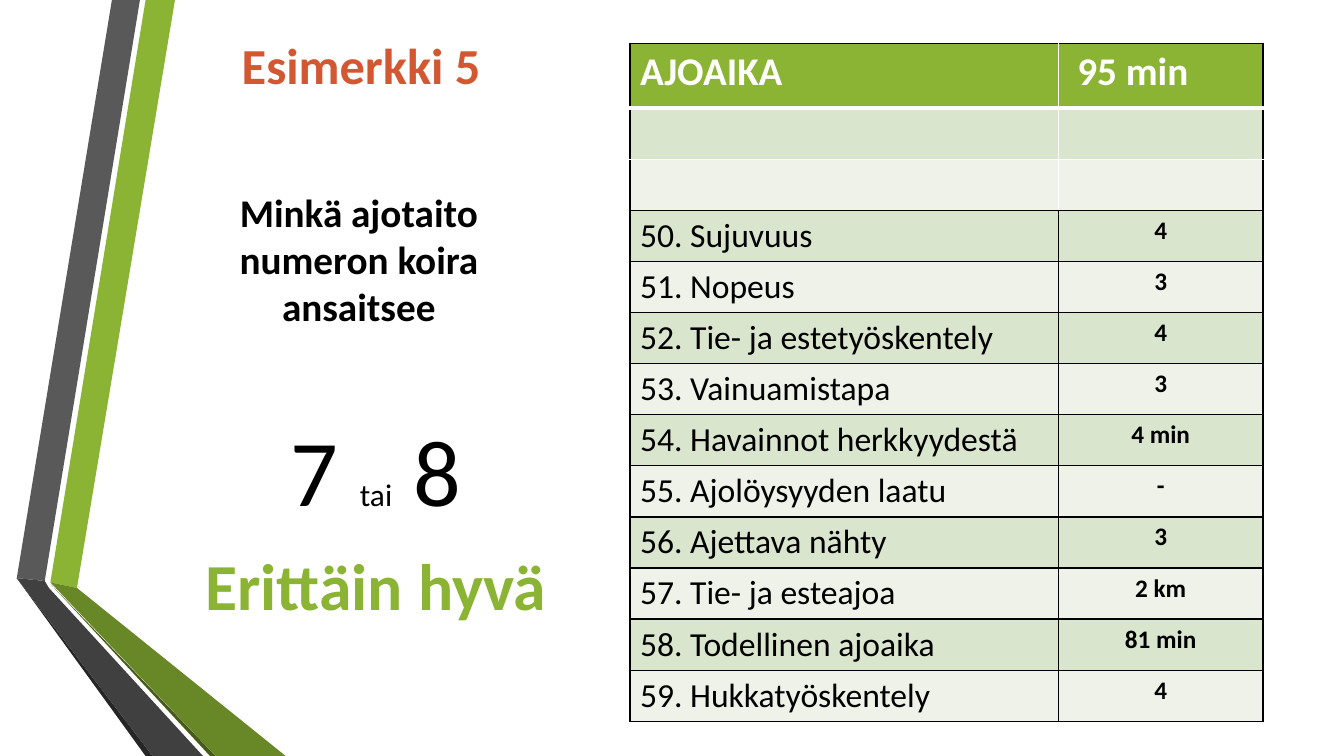
from lxml.etree import SubElement
from pptx import Presentation
from pptx.dml.color import RGBColor
from pptx.enum.text import MSO_ANCHOR, PP_ALIGN
from pptx.oxml.ns import qn
from pptx.util import Pt

BLACK = RGBColor(0x00, 0x00, 0x00)
WHITE = RGBColor(0xFF, 0xFF, 0xFF)
GREEN = RGBColor(0x8B, 0xB4, 0x34)
GREEN_SHADE = RGBColor(0x68, 0x87, 0x27)
GREEN_EDGE = RGBColor(0x46, 0x5A, 0x1A)
GREY = RGBColor(0x59, 0x59, 0x59)
GREY_SHADE = RGBColor(0x40, 0x40, 0x40)
GREY_EDGE = RGBColor(0x26, 0x26, 0x26)
ORANGE = RGBColor(0xD3, 0x57, 0x31)
BANDS = [RGBColor(0xDA, 0xE5, 0xCE), RGBColor(0xEE, 0xF2, 0xE8)]


def add_run(paragraph, text, color, **font_format):
    run = paragraph.add_run()
    run.text = text
    run.font.color.rgb = color
    for name, value in ({"name": "Calibri"} | font_format).items():
        setattr(run.font, name, value)


def add_border(cell, side, color, width):
    """Draw one cell edge; call in the order L, R, T, B and before filling."""
    line = SubElement(cell._tc.get_or_add_tcPr(), qn(f"a:ln{side}"), w=str(Pt(width)))
    fill = SubElement(line, qn("a:solidFill"))
    SubElement(fill, qn("a:srgbClr"), val=str(color))


prs = Presentation()
prs.slide_width, prs.slide_height = Pt(960), Pt(540)
slide = prs.slides.add_slide(prs.slide_layouts[6])

# Folded ribbons along the left edge
ribbons = [
    (GREEN, [(36, 416.2), (55.4, 419.8), (124.6, 0), (104.4, 0)]),
    (GREY, [(100.1, 0), (79.9, 0), (11.5, 412.6), (31.7, 415.4)]),
    (GREY_EDGE, [(11.5, 412.6), (104.4, 540), (108.7, 540)]),
    (GREEN_EDGE, [(36, 416.9), (149.8, 540), (154.1, 540)]),
    (GREEN_SHADE, [(36, 416.2), (154.1, 540), (203.8, 540), (55.4, 419.8)]),
    (GREY_SHADE, [(145.4, 540), (34.6, 419.8), (31.7, 415.4), (11.5, 412.6), (108.7, 540)]),
]
for color, points in ribbons:
    builder = slide.shapes.build_freeform(*points[0], scale=Pt(1))
    builder.add_line_segments(points[1:], close=True)
    ribbon = builder.convert_to_shape()
    ribbon.fill.solid()
    ribbon.fill.fore_color.rgb = color
    ribbon.line.fill.background()
    ribbon.shadow.inherit = False

# Heading, question and answer
BIG = {"size": Pt(67.2)}
texts = [
    ((165.6, 20.9, 242.6, 51.1), MSO_ANCHOR.TOP, PP_ALIGN.LEFT,
     [[("Esimerkki 5", ORANGE, {"size": Pt(36), "bold": True})]]),
    ((116.6, 131, 279.4, 108), MSO_ANCHOR.BOTTOM, PP_ALIGN.CENTER,
     [[("Minkä ajotaito numeron koira ansaitsee", BLACK, {"size": Pt(28), "bold": True})]]),
    ((128.9, 298.1, 279.4, 144), MSO_ANCHOR.MIDDLE, PP_ALIGN.CENTER,
     [[("7 ", BLACK, BIG), ("tai", BLACK, {"size": Pt(22.4)}), (" 8", BLACK, BIG)],
      [("Erittäin hyvä", GREEN, {"size": Pt(46.9), "bold": True})]]),
]
for place, anchor, alignment, lines in texts:
    frame = slide.shapes.add_textbox(*map(Pt, place)).text_frame
    frame.word_wrap = True
    frame.vertical_anchor = anchor
    for index, runs in enumerate(lines):
        paragraph = frame.add_paragraph() if index else frame.paragraphs[0]
        paragraph.alignment = alignment
        paragraph.space_before = Pt(13.6 if index else 0)
        for text, color, font_format in runs:
            add_run(paragraph, text, color, **font_format)

# Score table
scores = [
    ("AJOAIKA", " 95 min"),
    ("", ""),
    ("", ""),
    ("50. Sujuvuus", "4"),
    ("51. Nopeus", "3"),
    ("52. Tie- ja estetyöskentely", "4"),
    ("53. Vainuamistapa", "3"),
    ("54. Havainnot herkkyydestä", "4 min"),
    ("55. Ajolöysyyden laatu", "-"),
    ("56. Ajettava nähty", "3"),
    ("57. Tie- ja esteajoa", "2 km"),
    ("58. Todellinen ajoaika", "81 min"),
    ("59. Hukkatyöskentely", "4"),
]
HEADER_HEIGHT, ROW_HEIGHT = 46.6, 36.5
COLUMN_WIDTHS = [306, 146.2]
FIRST_SCORED_ROW = 3
# Horizontal rules from the top edge down; all later ones are thin black
rules = [(BLACK, 1), (WHITE, 3), (WHITE, 1)] + [(BLACK, 1)] * (len(scores) - 2)

height = HEADER_HEIGHT + ROW_HEIGHT * (len(scores) - 1)
table = slide.shapes.add_table(len(scores), 2, Pt(450), Pt(30.8),
                               Pt(sum(COLUMN_WIDTHS)), Pt(height)).table
for column, width in zip(table.columns, COLUMN_WIDTHS):
    column.width = Pt(width)

for row, values in enumerate(scores):
    table.rows[row].height = Pt(ROW_HEIGHT if row else HEADER_HEIGHT)
    divider = WHITE if row < FIRST_SCORED_ROW else BLACK
    for column, value in enumerate(values):
        cell = table.cell(row, column)
        add_border(cell, "L", divider if column else BLACK, 1)
        add_border(cell, "R", BLACK if column else divider, 1)
        add_border(cell, "T", *rules[row])
        add_border(cell, "B", *rules[row + 1])
        cell.fill.solid()
        cell.fill.fore_color.rgb = BANDS[(row - 1) % 2] if row else GREEN
        if not value:
            continue
        paragraph = cell.text_frame.paragraphs[0]
        if row == 0:
            add_run(paragraph, value, WHITE, size=Pt(28), bold=True)
        elif column == 0:
            add_run(paragraph, value, BLACK, size=Pt(24), bold=False)
        else:
            paragraph.alignment = PP_ALIGN.CENTER
            add_run(paragraph, value, BLACK, size=Pt(18), bold=True)

prs.save("out.pptx")
